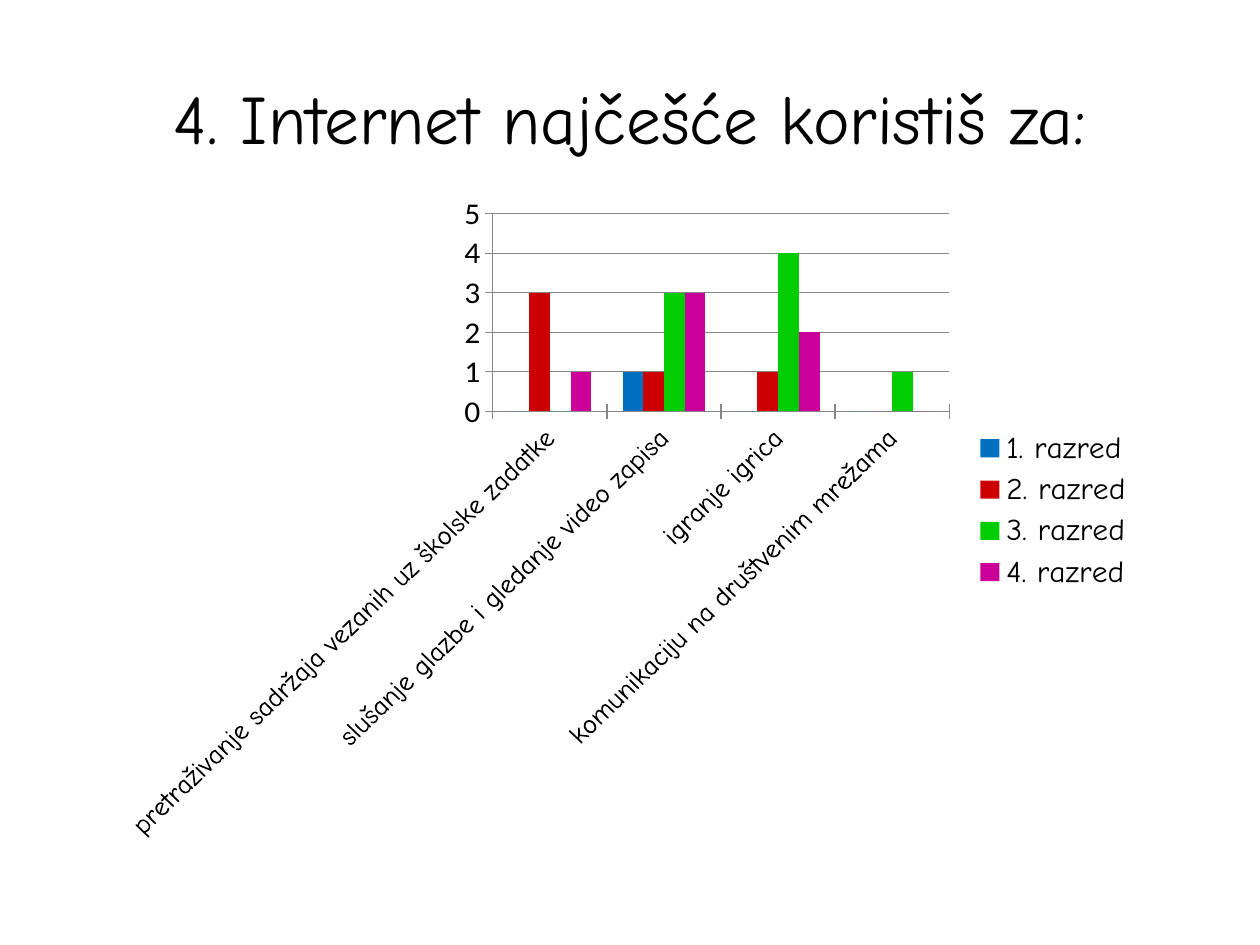
from pptx import Presentation
from pptx.chart.data import CategoryChartData
from pptx.dml.color import RGBColor
from pptx.enum.chart import XL_CHART_TYPE as ChartType
from pptx.enum.chart import XL_LEGEND_POSITION as LegendPosition
from pptx.enum.chart import XL_TICK_MARK as TickMark
from pptx.enum.text import MSO_ANCHOR, PP_ALIGN
from pptx.util import Cm, Pt

TITLE = "4. Internet najčešće koristiš za:"
PURPOSES = [
    "pretraživanje sadržaja vezanih uz školske zadatke",
    "slušanje glazbe i gledanje video zapisa",
    "igranje igrica",
    "komunikaciju na društvenim mrežama",
]
BLACK = RGBColor(0x00, 0x00, 0x00)
GREY = RGBColor(0x86, 0x86, 0x86)
BLUE = RGBColor(0x00, 0x70, 0xC0)
RED = RGBColor(0xCC, 0x00, 0x00)
GREEN = RGBColor(0x00, 0xCC, 0x00)
MAGENTA = RGBColor(0xCC, 0x00, 0x99)
GRADES = [
    ("1. razred", (0, 1, 0, 0), BLUE),
    ("2. razred", (3, 1, 1, 0), RED),
    ("3. razred", (0, 3, 4, 1), GREEN),
    ("4. razred", (1, 3, 2, 0), MAGENTA),
]
HEADING_FONT = "Comic Neue"
NUMBER_FONT = "Calibri"


def set_font(font, name, size):
    font.name = name
    font.size = Pt(size)
    font.bold = False
    font.color.rgb = BLACK


def add_title(slide):
    title = slide.shapes.title
    title.left, title.top, title.width, title.height = Cm(1.27), Cm(0.76), Cm(22.86), Cm(3.18)
    title.text_frame.text = TITLE
    title.text_frame.vertical_anchor = MSO_ANCHOR.MIDDLE
    paragraph = title.text_frame.paragraphs[0]
    paragraph.alignment = PP_ALIGN.CENTER
    set_font(paragraph.font, HEADING_FONT, 39.6)


def add_usage_chart(slide):
    data = CategoryChartData()
    data.categories = PURPOSES
    for name, values, _ in GRADES:
        data.add_series(name, values)
    chart = slide.shapes.add_chart(
        ChartType.COLUMN_CLUSTERED, Cm(2.11), Cm(3.94), Cm(21), Cm(13), data
    ).chart
    set_font(chart.font, NUMBER_FONT, 18)
    chart.has_title = False

    plot = chart.plots[0]
    plot.gap_width = 150
    plot.overlap = 0
    plot.vary_by_categories = False
    for series, (_, _, color) in zip(plot.series, GRADES):
        series.format.fill.solid()
        series.format.fill.fore_color.rgb = color

    for axis in (chart.category_axis, chart.value_axis):
        axis.major_tick_mark = TickMark.CROSS
        axis.minor_tick_mark = TickMark.NONE
        axis.format.line.color.rgb = GREY
    set_font(chart.category_axis.tick_labels.font, HEADING_FONT, 16)
    label_body = chart.category_axis._element.txPr.bodyPr
    label_body.set("rot", "-2700000")
    label_body.set("vert", "horz")

    value_axis = chart.value_axis
    value_axis.minimum_scale, value_axis.maximum_scale, value_axis.major_unit = 0, 5, 1
    value_axis.has_major_gridlines = True
    value_axis.major_gridlines.format.line.color.rgb = GREY

    chart.has_legend = True
    chart.legend.position = LegendPosition.RIGHT
    chart.legend.include_in_layout = False
    set_font(chart.legend.font, HEADING_FONT, 18)


def main():
    presentation = Presentation()
    presentation.slide_width, presentation.slide_height = Cm(25.4), Cm(19.05)
    slide = presentation.slides.add_slide(presentation.slide_layouts[5])
    add_title(slide)
    add_usage_chart(slide)
    presentation.save("out.pptx")


if __name__ == "__main__":
    main()
